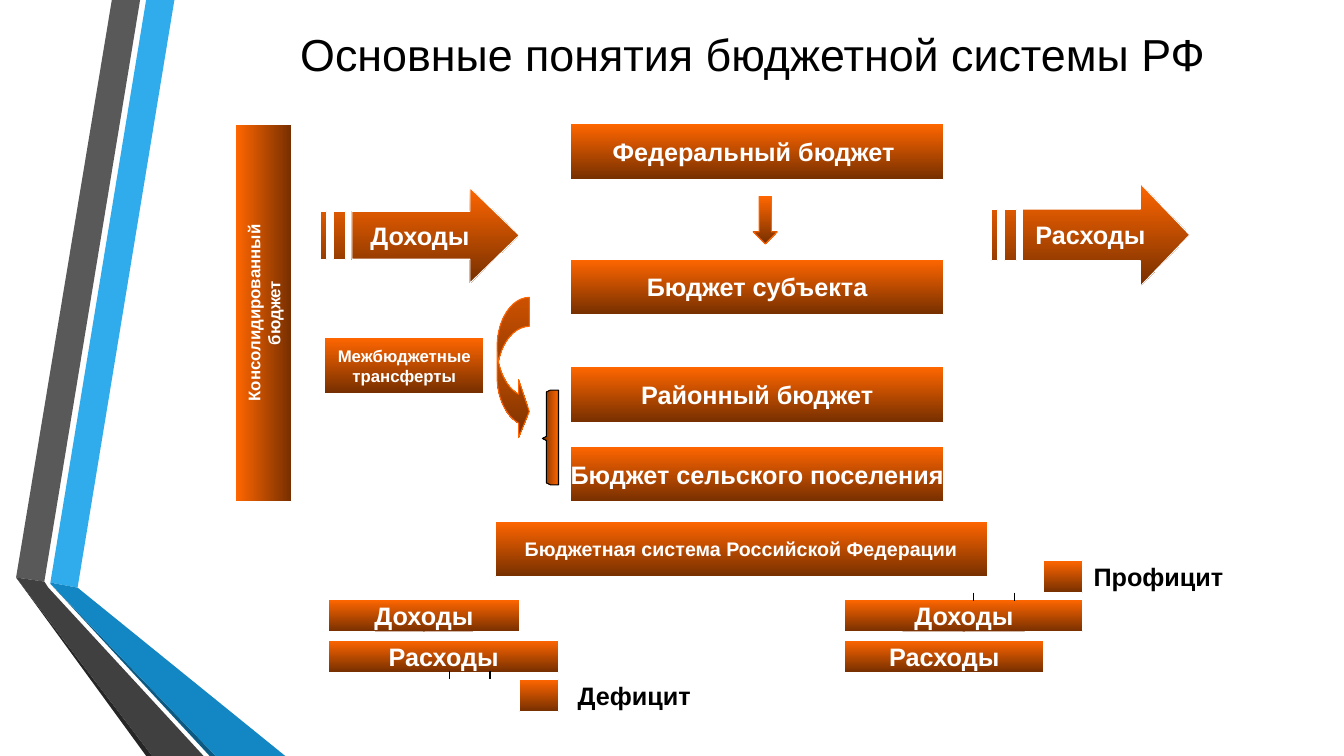
import pptx
import pptx.dml.color
import pptx.enum.shapes
import pptx.enum.text
import pptx.oxml.ns
import pptx.util
from lxml import etree
from pptx.util import Inches

FONT = "Arial"
SHAPE = pptx.enum.shapes.MSO_SHAPE
COLORS = {
    "white": "FFFFFF", "black": "000000", "orange": "FF6600", "brown": "762F00",
    "sky": "30ACEC", "blue": "1287C3", "navy": "0C5A82",
    "grey": "595959", "charcoal": "404040", "soot": "262626",
}
DOWN, LEFTWARD = 270, 180  # gradient directions, counter-clockwise degrees

# Decorative bands: colour and outline
BANDS = [
    ("sky", [(0.5, 5.78), (0.77, 5.83), (1.73, 0), (1.45, 0)]),
    ("grey", [(1.39, 0), (1.11, 0), (0.16, 5.73), (0.44, 5.77)]),
    ("soot", [(0.16, 5.73), (1.45, 7.5), (1.51, 7.5)]),
    ("navy", [(0.5, 5.79), (2.08, 7.5), (2.14, 7.5)]),
    ("blue", [(0.5, 5.79), (2.14, 7.5), (2.83, 7.5), (0.77, 5.83), (0.5, 5.78)]),
    ("charcoal", [(2.02, 7.5), (0.48, 5.83), (0.44, 5.77), (0.16, 5.73), (1.51, 7.5)]),
]

# Budget levels: top and name
LEVELS = [
    (1.23, "Федеральный бюджет "),
    (2.57, "Бюджет субъекта"),
    (3.64, "Районный бюджет"),
    (4.43, "Бюджет сельского поселения"),
]

# Balance bars: left, top, width, name
BALANCE_BARS = [
    (3.26, 5.95, 1.89, "Доходы"), (3.26, 6.35, 2.28, "Расходы"),
    (8.38, 5.95, 2.36, "Доходы"), (8.38, 6.35, 1.97, "Расходы"),
]

# Balance results: left and top of the square, name, left and top of the ticks
RESULTS = [
    (5.15, 6.74, "Дефицит", 4.46, 6.66),
    (10.35, 5.56, "Профицит", 9.66, 5.88),
]


def rgb(color):
    return pptx.dml.color.RGBColor.from_string(COLORS[color])


def write(shape, text, size=18, color="white", bold=True, wrap=False):
    frame = shape.text_frame
    frame.text = text
    frame.word_wrap = wrap
    frame.vertical_anchor = pptx.enum.text.MSO_ANCHOR.MIDDLE
    for paragraph in frame.paragraphs:
        paragraph.alignment = pptx.enum.text.PP_ALIGN.CENTER
        for run in paragraph.runs:
            run.font.name = FONT
            run.font.size = pptx.util.Pt(size)
            run.font.bold = bold
            run.font.color.rgb = rgb(color)


def paint(shape, fill=None, line="white", direction=DOWN):
    """Fill with one colour, or with the orange gradient if none is given."""
    shape.shadow.inherit = False
    if fill:
        shape.fill.solid()
        shape.fill.fore_color.rgb = rgb(fill)
    else:
        shape.fill.gradient()
        shape.fill.gradient_angle = direction
        for stop, color in zip(shape.fill.gradient_stops, ("orange", "brown")):
            stop.color.rgb = rgb(color)
    if line:
        shape.line.color.rgb = rgb(line)
        shape.line.width = pptx.util.Pt(0.75)
    else:
        shape.line.fill.background()


def add_block(slide, left, top, width, height, text="", kind=SHAPE.RECTANGLE,
              fill=None, line="white", **text_format):
    block = slide.shapes.add_shape(
        kind, Inches(left), Inches(top), Inches(width), Inches(height))
    paint(block, fill, line)
    if text:
        write(block, text, **text_format)
    return block


def add_outline(slide, *contours, **look):
    builder = None
    for contour in contours:
        start, *rest = [(Inches(x), Inches(y)) for x, y in contour]
        if builder is None:
            builder = slide.shapes.build_freeform(*start)
        else:
            builder.move_to(*start)
        builder.add_line_segments(rest, close=True)
    outline = builder.convert_to_shape()
    paint(outline, **look)
    return outline


def box_corners(left, top, right, bottom):
    return [(left, top), (left, bottom), (right, bottom), (right, top)]


def add_striped_arrow(slide, left, top, height, text):
    """Block arrow with two stripes behind its tail."""
    tail_top, tail_bottom = top + height / 4, top + height * 3 / 4
    tail, neck, tip = left + 0.31, left + 1.48, left + 1.97
    head = [(neck, top), (neck, tail_top), (tail, tail_top), (tail, tail_bottom),
            (neck, tail_bottom), (neck, top + height), (tip, top + height / 2)]
    stripes = [box_corners(left + start, tail_top, left + end, tail_bottom)
               for start, end in ((0.13, 0.25), (0, 0.06))]
    write(add_outline(slide, head, *stripes), text)


def add_tick(slide, x, top):
    tick = slide.shapes.add_connector(
        pptx.enum.shapes.MSO_CONNECTOR.STRAIGHT,
        Inches(x), Inches(top), Inches(x), Inches(top + 0.08))
    tick.line.color.rgb = rgb("black")
    tick.line.width = pptx.util.Pt(0.75)
    properties = tick._element.find(pptx.oxml.ns.qn("p:spPr"))
    etree.SubElement(properties, pptx.oxml.ns.qn("a:effectLst"))


def add_title(slide, text):
    title = slide.shapes.title
    title.left, title.top = Inches(2.47), Inches(0.22)
    title.width, title.height = Inches(10), Inches(0.63)
    write(title, text, size=32, color="black", bold=False, wrap=True)


def main():
    deck = pptx.Presentation()
    deck.slide_width, deck.slide_height = Inches(13.33), Inches(7.5)
    slide = deck.slides.add_slide(deck.slide_layouts[5])

    # Background bands and title
    for color, corners in BANDS:
        add_outline(slide, corners, fill=color, line=None)
    add_title(slide, "Основные понятия бюджетной системы РФ")

    # Budget levels and the whole system
    for top, name in LEVELS:
        add_block(slide, 5.66, top, 3.7, 0.55, name)
    add_block(slide, 4.91, 5.17, 4.88, 0.55,
              "Бюджетная система Российской Федерации", size=14)
    consolidated = add_block(slide, 0.74, 2.83, 3.75, 0.55,
                             "Консолидированный\nбюджет", size=12)
    consolidated.rotation = 270

    # Flows between the budgets
    add_striped_arrow(slide, 3.18, 1.86, 0.95, "Доходы")
    add_striped_arrow(slide, 9.83, 1.82, 1.02, "Расходы")
    add_block(slide, 7.47, 1.95, 0.24, 0.47, kind=SHAPE.DOWN_ARROW, line="orange")
    add_block(slide, 3.22, 3.35, 1.58, 0.55, "Межбюджетные\nтрансферты", size=12)
    transfer = add_block(slide, 4.93, 2.95, 0.32, 1.42,
                         kind=SHAPE.CURVED_RIGHT_ARROW, line="orange")
    for index, value in enumerate((0.898, 1.796, 0.333)):
        transfer.adjustments[index] = value
    local_brace = [(5.54, 3.87), (5.46, 3.87), (5.42, 3.89), (5.42, 4.33), (5.38, 4.35),
                   (5.42, 4.37), (5.42, 4.79), (5.46, 4.81), (5.54, 4.81)]
    add_outline(slide, local_brace, line="black", direction=LEFTWARD)

    # Deficit and surplus
    for left, top, width, name in BALANCE_BARS:
        add_block(slide, left, top, width, 0.32, name)
    for left, top, name, tick_left, tick_top in RESULTS:
        add_block(slide, left, top, 0.39, 0.32)
        add_block(slide, left + 0.47, top - 0.08, 1.34, 0.47, name,
                  fill="white", color="black")
        for offset in (0, 0.4):
            add_tick(slide, tick_left + offset, tick_top)

    deck.save("out.pptx")


if __name__ == "__main__":
    main()
